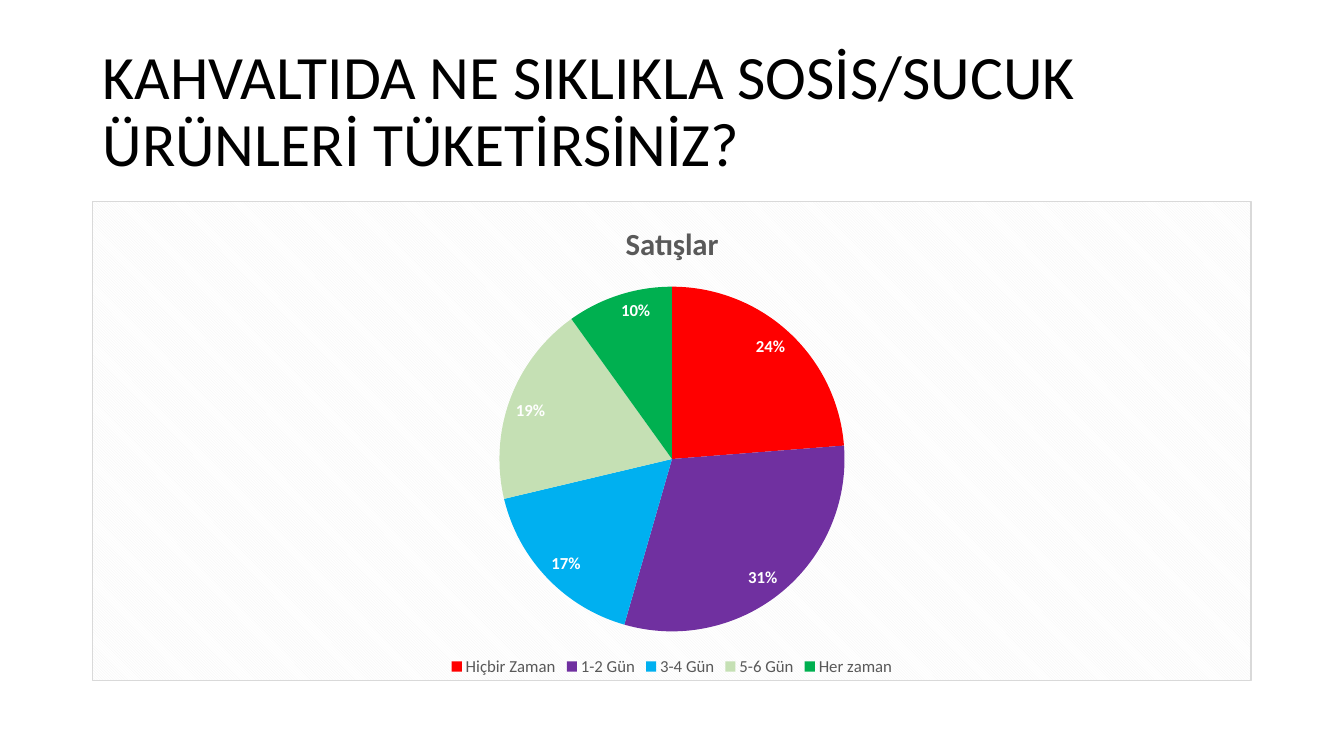
from lxml.etree import fromstring
from pptx import Presentation
from pptx.chart.data import CategoryChartData
from pptx.dml.color import RGBColor
from pptx.enum.chart import XL_CHART_TYPE, XL_LABEL_POSITION, XL_LEGEND_POSITION
from pptx.enum.text import MSO_ANCHOR, MSO_AUTO_SIZE, PP_ALIGN
from pptx.util import Cm, Pt

COLORS = {
    "text": "000000", "muted": "595959", "label": "FFFFFF",
    "border": "D9D9D9", "stripe": "F2F2F2", "background": "FFFFFF",
    "red": "FF0000", "purple": "7030A0", "blue": "00B0F0",
    "pale_green": "C5E0B4", "green": "00B050",
}
ANSWERS = [  # answer, percent, colour
    ("Hiçbir Zaman", 24, "red"),
    ("1-2 Gün", 31, "purple"),
    ("3-4 Gün", 17, "blue"),
    ("5-6 Gün", 19, "pale_green"),
    ("Her zaman", 10, "green"),
]
CHART_FRAME = f"""
<c:spPr xmlns:c="http://schemas.openxmlformats.org/drawingml/2006/chart"
        xmlns:a="http://schemas.openxmlformats.org/drawingml/2006/main">
  <a:pattFill prst="dkDnDiag">
    <a:fgClr><a:srgbClr val="{COLORS['stripe']}"/></a:fgClr>
    <a:bgClr><a:srgbClr val="{COLORS['background']}"/></a:bgClr>
  </a:pattFill>
  <a:ln w="{Pt(0.75)}">
    <a:solidFill><a:srgbClr val="{COLORS['border']}"/></a:solidFill>
  </a:ln>
</c:spPr>"""


def apply(target, values):
    for name, value in values.items():
        setattr(target, name, value)


class SlideBuilder:
    font_name = "Calibri"

    def __init__(self, presentation):
        self.slide = presentation.slides.add_slide(presentation.slide_layouts[5])

    def style_font(self, font, size, color, bold=False):
        apply(font, {"name": self.font_name, "size": Pt(size), "bold": bold})
        font.color.rgb = RGBColor.from_string(COLORS[color])

    def title(self, text, left, top, width, height):
        shape = self.slide.shapes.title
        apply(shape, {"left": Cm(left), "top": Cm(top),
                      "width": Cm(width), "height": Cm(height)})
        apply(shape.text_frame, {"text": text, "word_wrap": True,
                                 "auto_size": MSO_AUTO_SIZE.NONE,
                                 "vertical_anchor": MSO_ANCHOR.MIDDLE})
        paragraph = shape.text_frame.paragraphs[0]
        apply(paragraph, {"alignment": PP_ALIGN.LEFT, "line_spacing": 0.9})
        self.style_font(paragraph.runs[0].font, 44, "text")

    def pie(self, name, answers, left, top, width, height):
        categories, values, colors = zip(*answers)
        data = CategoryChartData()
        data.categories = categories
        data.add_series(name, values)
        chart = self.slide.shapes.add_chart(
            XL_CHART_TYPE.PIE, Cm(left), Cm(top), Cm(width), Cm(height), data).chart
        self.style_font(chart.font, 10, "text")

        # Chart title
        chart.has_title = True
        chart.chart_title.include_in_layout = False
        chart.chart_title.text_frame.text = name
        run = chart.chart_title.text_frame.paragraphs[0].runs[0]
        self.style_font(run.font, 22, "muted", bold=True)

        # Legend
        chart.has_legend = True
        apply(chart.legend, {"position": XL_LEGEND_POSITION.BOTTOM,
                             "include_in_layout": False})
        self.style_font(chart.legend.font, 12, "muted")

        # Slices
        plot = chart.plots[0]
        plot.vary_by_categories = True
        for index, color in enumerate(colors):
            fill = plot.series[0].points[index].format.fill
            fill.solid()
            fill.fore_color.rgb = RGBColor.from_string(COLORS[color])

        # Percent labels
        labels = plot.series[0].data_labels
        apply(labels, {"show_percentage": True, "show_value": False,
                       "show_legend_key": False, "number_format": "0%",
                       "number_format_is_linked": False,
                       "position": XL_LABEL_POSITION.INSIDE_END})
        self.style_font(labels.font, 12, "label", bold=True)

        # Striped background and border
        chart_space = chart.element
        chart_space.find("{*}chart").addnext(fromstring(CHART_FRAME))


def main():
    presentation = Presentation()
    apply(presentation, {"slide_width": Cm(33.87), "slide_height": Cm(19.05)})
    builder = SlideBuilder(presentation)
    builder.title("KAHVALTIDA NE SIKLIKLA SOSİS/SUCUK ÜRÜNLERİ TÜKETİRSİNİZ?",
                  2.33, 1.01, 29.21, 3.68)
    builder.pie("Satışlar", ANSWERS, 2.33, 5.07, 29.21, 12.09)
    presentation.save("out.pptx")


if __name__ == "__main__":
    main()
